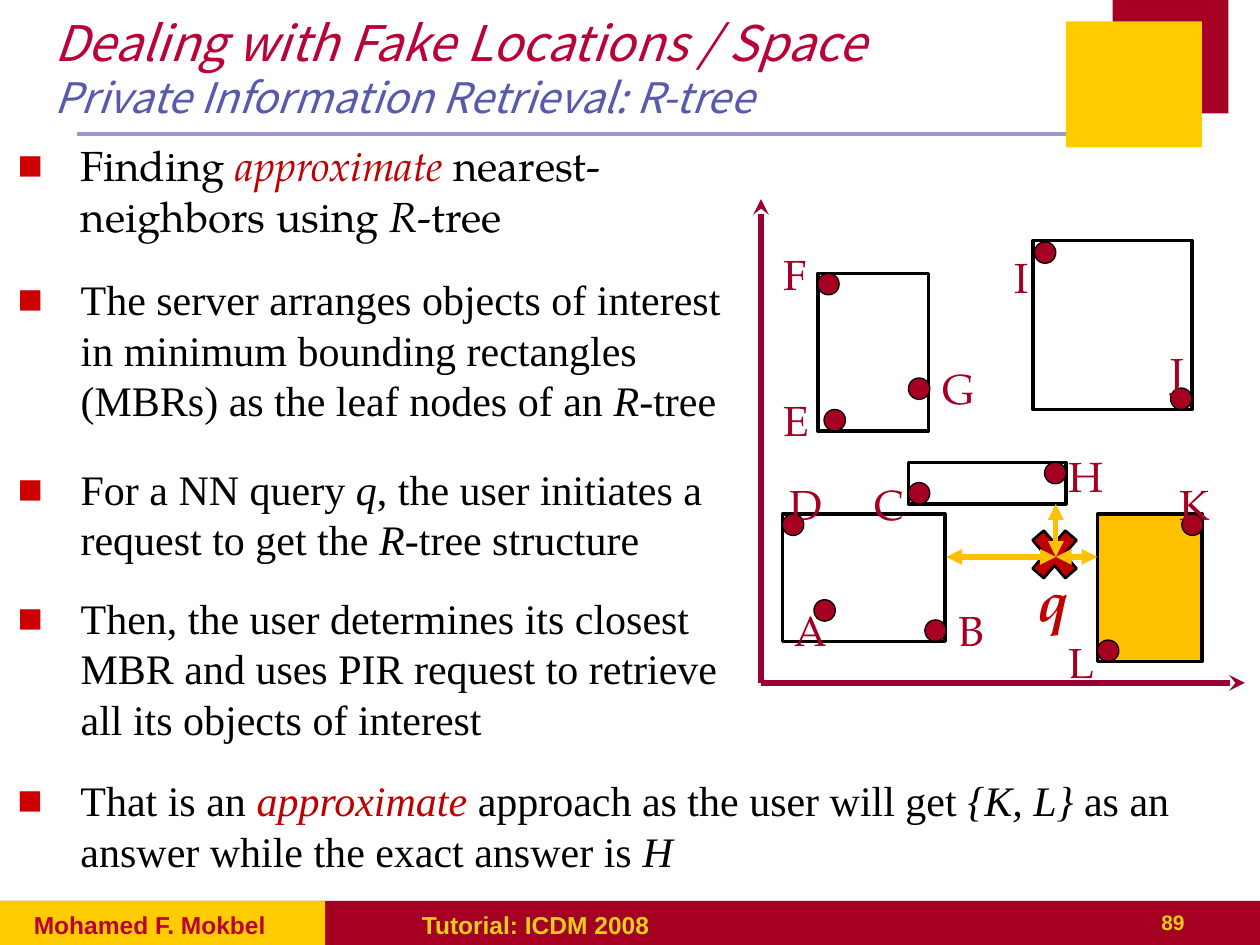
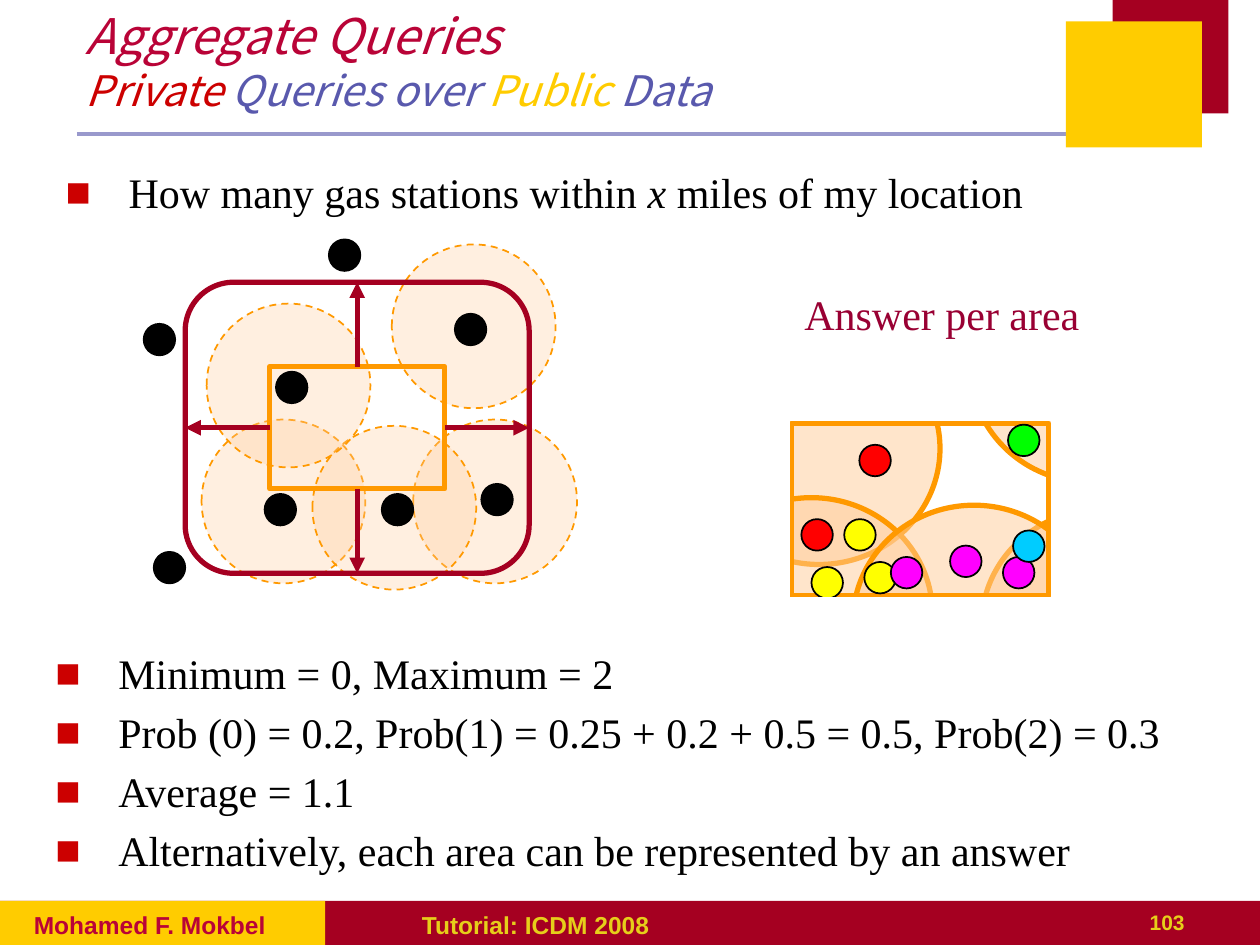
from copy import deepcopy

from lxml.etree import SubElement
from pptx import Presentation
from pptx.dml.color import RGBColor
from pptx.enum.dml import MSO_LINE
from pptx.enum.shapes import MSO_CONNECTOR, MSO_SHAPE
from pptx.enum.text import MSO_ANCHOR, MSO_AUTO_SIZE, PP_ALIGN
from pptx.oxml.ns import qn
from pptx.util import Cm, Pt

COLORS = {
    "crimson": "A50021", "gold": "FFCC00", "lavender": "9999CC", "title": "B90337",
    "subtitle": "5959AD", "footer": "E6CE1A", "bullet": "CC0000", "key": "C00000",
    "axis": "990033", "amber": "FFC000", "orange": "FF9900", "peach": "FFCC99",
    "black": "000000", "white": "FFFFFF", "red": "FF0000", "yellow": "FFFF00",
    "magenta": "FF00FF", "green": "00FF00", "cyan": "00CCFF",
}
SERIF, PAGELLA, SANS, HEADING = "Times New Roman", "TeX Gyre Pagella", "Arial", "Noto Sans CJK KR"
TOP, LEFT, BOTTOM, RIGHT = range(4)


def inches(value):
    return Cm(value * 2.54)


class SlideBuilder:
    def __init__(self):
        self.deck = Presentation()
        self.deck.slide_width, self.deck.slide_height = inches(10), inches(7.5)
        self.page = None

    def color(self, name):
        return RGBColor.from_string(COLORS[name])

    def start_page(self, number):
        self.page = self.deck.slides.add_slide(self.deck.slide_layouts[1])
        self.connector((0.61, 1.06), (8.53, 1.06), "lavender", 2.25)
        for place, fill in (
            ((0, 7.15, 10, 0.35), "crimson"), ((0, 7.15, 2.58, 0.35), "gold"),
            ((8.83, 0, 0.92, 0.9), "crimson"), ((8.46, 0.17, 1.08, 1), "gold"),
        ):
            self.shape(MSO_SHAPE.RECTANGLE, place, fill)
        for text, place, size, color, align in (
            ("Mohamed F. Mokbel", (0.17, 7.17, 2.33, 0.25), 14, "title", PP_ALIGN.LEFT),
            ("Tutorial: ICDM 2008", (3.25, 7.17, 4.67, 0.33), 14, "footer", PP_ALIGN.LEFT),
            (number, (7.42, 7.17, 2.08, 0.33), 12, "footer", PP_ALIGN.RIGHT),
        ):
            self.text(text, place, size, SANS, color, align, bold=True)

    def shape(self, kind, place, fill=None, line=None, width=1, alpha=None, dashed=False):
        box = self.page.shapes.add_shape(kind, *map(inches, place))
        box.shadow.inherit = False
        if fill:
            box.fill.solid()
            box.fill.fore_color.rgb = self.color(fill)
            if alpha:
                tint = box.fill._xPr.find(".//" + qn("a:srgbClr"))
                SubElement(tint, qn("a:alpha"), val=str(alpha * 1000))
        else:
            box.fill.background()
        if line:
            box.line.color.rgb = self.color(line)
            box.line.width = Pt(width)
            if dashed:
                box.line.dash_style = MSO_LINE.DASH
        else:
            box.line.fill.background()
        return box

    def dot(self, left, top, size, fill, width=1):
        self.shape(MSO_SHAPE.OVAL, (left, top, size, size), fill, "black", width)

    def connector(self, start, end, color, width, head=None, tail=None):
        line = self.page.shapes.add_connector(
            MSO_CONNECTOR.STRAIGHT, *map(inches, (*start, *end)))
        line.line.color.rgb = self.color(color)
        line.line.width = Pt(width)
        for tag, kind in (("a:headEnd", head), ("a:tailEnd", tail)):
            if kind:
                SubElement(line.line._get_or_add_ln(), qn(tag), type=kind)
        SubElement(line._element.spPr, qn("a:effectLst"))
        return line

    def span(self, para, text, size, font, color, bold=False, italic=False):
        span = para.add_run()
        span.text = text
        span.font.size, span.font.name = Pt(size), font
        span.font.bold, span.font.italic = bold, italic
        span.font.color.rgb = self.color(color)
        return span

    def text(self, text, place, size, font, color, align=PP_ALIGN.CENTER,
             bold=False, italic=False, wrap=True):
        box = self.page.shapes.add_textbox(*map(inches, place))
        box.text_frame.word_wrap = wrap
        para = box.text_frame.paragraphs[0]
        para.alignment = align
        self.span(para, text, size, font, color, bold, italic)

    def move(self, box, place):
        box.left, box.top, box.width, box.height = map(inches, place)
        box.text_frame.word_wrap = True
        box.text_frame.auto_size = MSO_AUTO_SIZE.NONE

    def title(self, heading, subtitle, place):
        box = self.page.shapes.title
        self.move(box, place)
        box.text_frame.vertical_anchor = MSO_ANCHOR.MIDDLE
        para = box.text_frame.paragraphs[0]
        para.alignment = PP_ALIGN.LEFT
        first = self.span(para, heading, 28, HEADING, "title", italic=True)
        para.add_line_break()
        para._p.find(qn("a:br")).insert(0, deepcopy(first._r.rPr))
        for text, color in subtitle:
            self.span(para, text, 24, HEADING, color, italic=True)

    def bullets(self, place, items, placeholder=False):
        if placeholder:
            box = self.page.placeholders[1]
        else:
            box = self.page.shapes.add_textbox(*map(inches, place))
        self.move(box, place)
        frame = box.text_frame
        for index, (gap, font, spans) in enumerate(items):
            para = frame.add_paragraph() if index else frame.paragraphs[0]
            self.bullet(para)
            para.space_before = Pt(gap)
            for text, *style in spans:
                color = "key" if "key" in style else "black"
                self.span(para, text, 24, font, color, italic=bool(style))

    def bullet(self, para):
        properties = para._p.get_or_add_pPr()
        properties.set("marL", str(inches(0.5)))
        properties.set("indent", str(inches(-0.5)))
        tint = SubElement(properties, qn("a:buClr"))
        SubElement(tint, qn("a:srgbClr"), val=COLORS["bullet"])
        SubElement(properties, qn("a:buFont"), typeface=SANS)
        SubElement(properties, qn("a:buChar"), char="■")


def build_rtree(slide):
    slide.start_page("89")
    slide.title("Dealing with Fake Locations / Space",
                [("Private Information Retrieval: R-tree", "subtitle")], (0.33, 0.12, 7.67, 0.83))
    slide.bullets((0.04, 1.06, 6.04, 4.95), [
        (0, PAGELLA, [("Finding ",), ("approximate", "key"),
                      (" nearest-neighbors using ",), ("R", "italic"), ("-tree",)]),
        (19, SERIF, [("The server arranges objects of interest in minimum bounding "
                      "rectangles (MBRs) as the leaf nodes of an ",),
                     ("R", "italic"), ("-tree",)]),
        (22, SERIF, [("For a NN query ",), ("q", "italic"),
                     (", the user initiates a request to get the ",),
                     ("R", "italic"), ("-tree structure",)]),
        (16, SERIF, [("Then, the user determines its closest MBR and uses PIR "
                      "request to retrieve all its objects of interest",)]),
    ], placeholder=True)
    slide.bullets((0.04, 6.1, 9.42, 0.94), [
        (0, SERIF, [("That is an ",), ("approximate", "key"),
                    (" approach as the user will get ",), ("{K, L} ", "italic"),
                    ("as an answer while the exact answer is ",), ("H", "italic")]),
    ])

    for place, fill in (
        ((8.71, 4.08, 0.83, 1.17), "amber"), ((6.49, 2.17, 0.88, 1.25), None),
        ((6.21, 4.08, 1.29, 1.01), None), ((8.2, 1.91, 1.26, 1.34), None),
        ((7.21, 3.67, 1.25, 0.33), None),
    ):
        slide.shape(MSO_SHAPE.RECTANGLE, place, fill, "black", 2)

    origin = (6.04, 5.42)
    for end in ((6.04, 1.58), (9.88, 5.42)):
        slide.connector(origin, end, "axis", 3, tail="stealth")

    objects = {
        "A": ((6.46, 4.76), (6.21, 4.75)), "B": ((7.34, 4.92), (7.51, 4.75)),
        "C": ((7.21, 3.83), (6.84, 3.75)), "D": ((6.21, 4.08), (6.17, 3.75)),
        "E": ((6.54, 3.25), (6.12, 3.08)), "F": ((6.49, 2.17), (6.12, 1.92)),
        "G": ((7.21, 3), (7.38, 2.83)), "H": ((8.29, 3.67), (8.38, 3.53)),
        "I": ((8.21, 1.92), (7.92, 1.95)), "J": ((9.29, 3.08), (9.16, 2.7)),
        "K": ((9.38, 4.08), (9.26, 3.75)), "L": ((8.71, 5.08), (8.38, 5)),
    }
    for point, _ in objects.values():
        slide.dot(*point, 0.17, "crimson", 0.75)
    for name, (_, corner) in objects.items():
        slide.text(name, (*corner, 0.37, 0.5), 24, PAGELLA, "crimson")

    slide.shape(MSO_SHAPE.MATH_MULTIPLY, (8.12, 4.11, 0.5, 0.58), "key", "black", 1.5)
    slide.text("q", (8.12, 4.44, 0.48, 0.64), 32, PAGELLA, "key",
               bold=True, italic=True, wrap=False)
    for end in ((8.38, 4), (8.71, 4.42), (7.51, 4.42)):
        slide.connector((8.38, 4.42), end, "amber", 3, "triangle", "triangle")


def build_aggregate(slide):
    slide.start_page("103")
    slide.title("Aggregate Queries", [
        ("Private ", "bullet"), ("Queries over ", "subtitle"),
        ("Public", "gold"), (" Data", "subtitle"),
    ], (0.58, 0.06, 7.67, 0.83))
    slide.bullets((0.42, 1.27, 9.58, 0.67), [
        (0, SERIF, [("How many gas stations within ",), ("x", "italic"),
                    (" miles of my location",)]),
    ], placeholder=True)

    for corner in ((3.11, 1.94), (1.6, 3.33), (3.28, 3.33), (2.48, 3.38), (1.64, 2.41)):
        slide.shape(MSO_SHAPE.OVAL, (*corner, 1.3, 1.3), "peach", "orange", 1, 30, True)
    query = slide.shape(MSO_SHAPE.RECTANGLE, (2.14, 2.91, 1.39, 0.97), None, "orange", 3)
    for corner in ((1.14, 2.57), (3.61, 2.49), (2.61, 1.9), (3.82, 3.84),
                   (3.03, 3.92), (2.19, 2.95), (1.22, 4.38), (2.1, 3.92)):
        slide.dot(*corner, 0.25, "black")
    extended = slide.shape(MSO_SHAPE.ROUNDED_RECTANGLE, (1.47, 2.24, 2.73, 2.31),
                           None, "crimson", 3)
    for side in (TOP, LEFT, BOTTOM, RIGHT):
        arrow = slide.connector((0, 0), (1, 1), "crimson", 3, tail="triangle")
        arrow.begin_connect(query, side)
        arrow.end_connect(extended, side)

    def areas(corners):
        for corner in corners:
            slide.shape(MSO_SHAPE.OVAL, (*corner, 1.92, 1.84), "peach", "orange", 3, 50)

    def mask(*place):
        slide.shape(MSO_SHAPE.RECTANGLE, place, "white", "white", 3)

    areas([(5.54, 2.64), (7.7, 1.99)])
    mask(5.46, 1.86, 4.24, 1.46)
    slide.text("Answer per area", (5.94, 2.24, 3.07, 0.63), 24, SERIF, "axis")
    areas([(5.48, 3.95), (7.79, 4.04), (6.77, 4.01)])
    slide.shape(MSO_SHAPE.RECTANGLE, (6.28, 3.36, 2.04, 1.37), None, "orange", 3)
    for left, top, fill in (
        (6.36, 4.12, "red"), (6.7, 4.12, "yellow"), (7.96, 4.42, "magenta"),
        (8, 3.37, "green"), (6.82, 3.53, "red"), (6.44, 4.5, "yellow"),
        (6.86, 4.46, "yellow"), (7.07, 4.42, "magenta"), (7.54, 4.33, "magenta"),
        (8.04, 4.21, "cyan"),
    ):
        slide.dot(left, top, 0.25, fill)
    mask(5.46, 4.76, 4.54, 1.39)
    mask(8.36, 2.91, 1.34, 2.02)
    mask(5.25, 3.08, 1, 2.02)

    slide.bullets((0.34, 5.09, 9.28, 1.68), [
        (5 if index else 0, SERIF, [(line,)]) for index, line in enumerate((
            "Minimum = 0, Maximum = 2",
            "Prob (0) = 0.2, Prob(1) = 0.25 + 0.2 + 0.5 = 0.5, Prob(2) = 0.3",
            "Average = 1.1",
            "Alternatively, each area can be represented by an answer",
        ))
    ])


def main():
    slide = SlideBuilder()
    build_rtree(slide)
    build_aggregate(slide)
    slide.deck.save("out.pptx")


if __name__ == "__main__":
    main()
